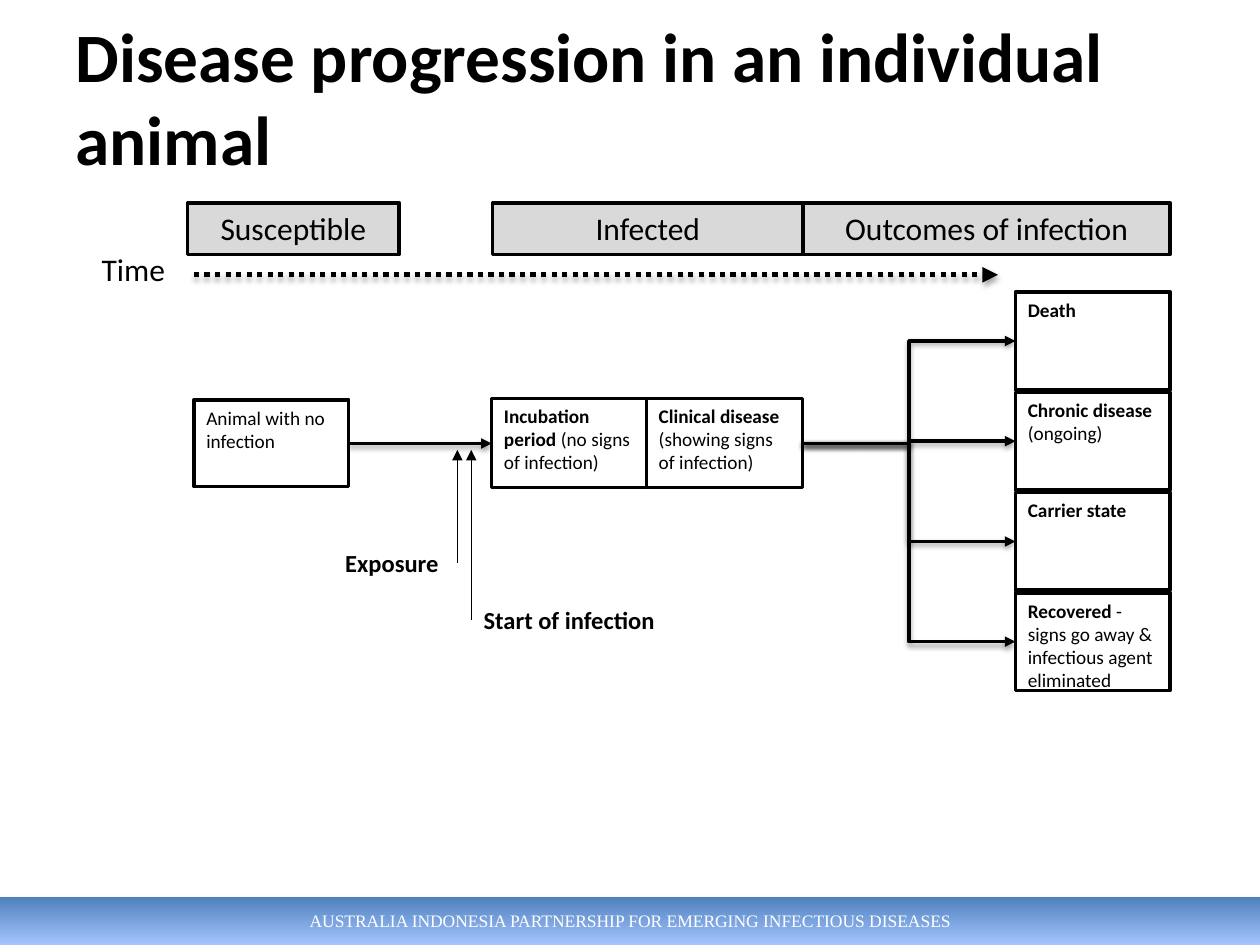
from lxml import etree
from pptx import Presentation
from pptx.dml.color import RGBColor
from pptx.enum.dml import MSO_LINE
from pptx.enum.shapes import MSO_CONNECTOR, MSO_SHAPE
from pptx.enum.text import MSO_ANCHOR, MSO_AUTO_SIZE, PP_ALIGN
from pptx.oxml.ns import qn
from pptx.util import Cm, Pt

RECTANGLE = MSO_SHAPE.RECTANGLE
STRAIGHT, ELBOW = MSO_CONNECTOR.STRAIGHT, MSO_CONNECTOR.ELBOW
LEFT, CENTER = PP_ALIGN.LEFT, PP_ALIGN.CENTER
TOP, MIDDLE = MSO_ANCHOR.TOP, MSO_ANCHOR.MIDDLE
BLACK, WHITE, GREY = "000000", "FFFFFF", "D9D9D9"
FOOTER_COLOURS = ("4F81BD", "A4C4FF")

# A text is a list of paragraphs; a paragraph is a list of (words, bold) runs.
TITLE = [[("Disease progression in an individual animal", True)]]
FOOTER = [[("AUSTRALIA INDONESIA PARTNERSHIP FOR EMERGING INFECTIOUS DISEASES", False)]]

# (text, left, width) in cm
HEADINGS = [
    ("Susceptible", 3.78, 4.27),
    ("Infected", 9.93, 6.26),
    ("Outcomes of infection", 16.19, 7.4),
]
HEADING_TOP, HEADING_HEIGHT = 4.09, 1.04

# (text, (left, top, width, height)) in cm
STAGES = [
    ([[("Animal with no infection", False)]], (3.91, 8.06, 3.12, 1.75)),
    ([[("Incubation period ", True), ("(no signs of infection)", False)]],
     (9.91, 8.03, 3.12, 1.8)),
    ([[("Clinical disease ", True), ("(showing signs of infection)", False)]],
     (13.03, 8.03, 3.15, 1.8)),
]
OUTCOMES = [
    [[("Death", True)]],
    [[("Chronic disease", True)], [("(ongoing)", False)]],
    [[("Carrier state", True)]],
    [[("Recovered", True),
      (" - signs go away & infectious agent eliminated", False)]],
]
OUTCOME_LEFT, OUTCOME_TOP, OUTCOME_WIDTH, OUTCOME_HEIGHT = 20.47, 5.89, 3.12, 1.97
OUTCOME_STEP = 2.02

# (text, (left, top, width, height), size, bold, anchor)
LABELS = [
    ("Time", (1.8, 4.91, 1.9, 1.02), 18, False, TOP),
    ("Exposure", (6.71, 10.92, 2.51, 0.86), 14, True, MIDDLE),
    ("Start of infection", (9.5, 12.07, 5.69, 0.86), 14, True, MIDDLE),
]
EVENT_ARROWS = [(9.22, 11.35), (9.5, 12.5)]  # (x, y of the tail)
EVENT_TIP = 9.07
TIME_ARROW = ((3.91, 5.54), (20.12, 5.54))
FLOW_Y = 8.94


def colour(code):
    return RGBColor.from_string(code)


def write(shape, paragraphs, size, align=LEFT, anchor=TOP, font="Calibri", ink=BLACK):
    frame = shape.text_frame
    frame.word_wrap = True
    frame.auto_size = MSO_AUTO_SIZE.NONE
    frame.vertical_anchor = anchor
    for index, runs in enumerate(paragraphs):
        para = frame.paragraphs[0] if index == 0 else frame.add_paragraph()
        para.alignment = align
        for words, bold in runs:
            span = para.add_run()
            span.text = words
            look = {"name": font, "size": Pt(size), "bold": bold}
            for name, value in look.items():
                setattr(span.font, name, value)
            span.font.color.rgb = colour(ink)


def add_shadow(effects, opacity, distance):
    """Put a soft downward shadow into an effect list."""
    shadow = etree.SubElement(
        effects, qn("a:outerShdw"), blurRad=str(Pt(3.15)), dist=str(Pt(distance)),
        dir="5400000", rotWithShape="0")
    ink = etree.SubElement(shadow, qn("a:srgbClr"), val=BLACK)
    etree.SubElement(ink, qn("a:alpha"), val=str(opacity * 1000))


def add_box(page, place, fill):
    box = page.shapes.add_shape(RECTANGLE, *map(Cm, place))
    box.shadow.inherit = False
    box.fill.solid()
    box.fill.fore_color.rgb = colour(fill)
    box.line.color.rgb = colour(BLACK)
    box.line.width = Pt(2)
    return box


def add_arrow(page, start, end, width=2, kind=STRAIGHT, dash=None, shadow=(38, 1.6)):
    arrow = page.shapes.add_connector(kind, *map(Cm, start + end))
    arrow.line.color.rgb = colour(BLACK)
    arrow.line.width = Pt(width)
    if dash:
        arrow.line.dash_style = dash
    properties = arrow._element.spPr
    etree.SubElement(properties.find(qn("a:ln")), qn("a:tailEnd"), type="triangle")
    effects = etree.SubElement(properties, qn("a:effectLst"))
    if shadow:
        add_shadow(effects, *shadow)


def add_footer(page):
    bar = page.shapes.add_shape(RECTANGLE, Cm(0), Cm(18.08), Cm(25.4), Cm(0.97))
    bar.fill.gradient()
    bar.fill.gradient_angle = 270
    for stop, code in zip(bar.fill.gradient_stops, FOOTER_COLOURS):
        stop.color.rgb = colour(code)
    bar.line.fill.background()
    bar.shadow.inherit = False
    add_shadow(bar._element.spPr.find(qn("a:effectLst")), 35, 1.8)
    write(bar, FOOTER, 10, CENTER, MIDDLE, "Times New Roman", WHITE)


def add_title(page):
    title = page.shapes.title
    title.left, title.top, title.width, title.height = map(Cm, (1.27, 0.76, 22.86, 2.36))
    write(title, TITLE, 39.6, LEFT, MIDDLE)


def add_diagram(page):
    add_arrow(page, *TIME_ARROW, width=3, dash=MSO_LINE.ROUND_DOT, shadow=(35, 1.8))
    for text, place in STAGES:
        write(add_box(page, place, WHITE), text, 11)
    for text, left, width in HEADINGS:
        box = add_box(page, (left, HEADING_TOP, width, HEADING_HEIGHT), GREY)
        write(box, [[(text, False)]], 18, CENTER)

    animal, incubation, clinical = [place for _, place in STAGES]
    add_arrow(page, (animal[0] + animal[2], FLOW_Y), (incubation[0], FLOW_Y))
    fork = (clinical[0] + clinical[2], FLOW_Y)
    for index, text in enumerate(OUTCOMES):
        top = OUTCOME_TOP + index * OUTCOME_STEP
        box = add_box(page, (OUTCOME_LEFT, top, OUTCOME_WIDTH, OUTCOME_HEIGHT), WHITE)
        write(box, text, 11)
        add_arrow(page, fork, (OUTCOME_LEFT, top + OUTCOME_HEIGHT / 2), kind=ELBOW)

    for x, tail in EVENT_ARROWS:
        add_arrow(page, (x, tail), (x, EVENT_TIP), width=0.75, shadow=None)
    for text, place, size, bold, anchor in LABELS:
        label = page.shapes.add_textbox(*map(Cm, place))
        write(label, [[(text, bold)]], size, anchor=anchor)


def main():
    deck = Presentation()
    deck.slide_width, deck.slide_height = Cm(25.4), Cm(19.05)
    page = deck.slides.add_slide(deck.slide_layouts[5])
    add_footer(page)
    add_title(page)
    add_diagram(page)
    deck.save("out.pptx")


if __name__ == "__main__":
    main()
